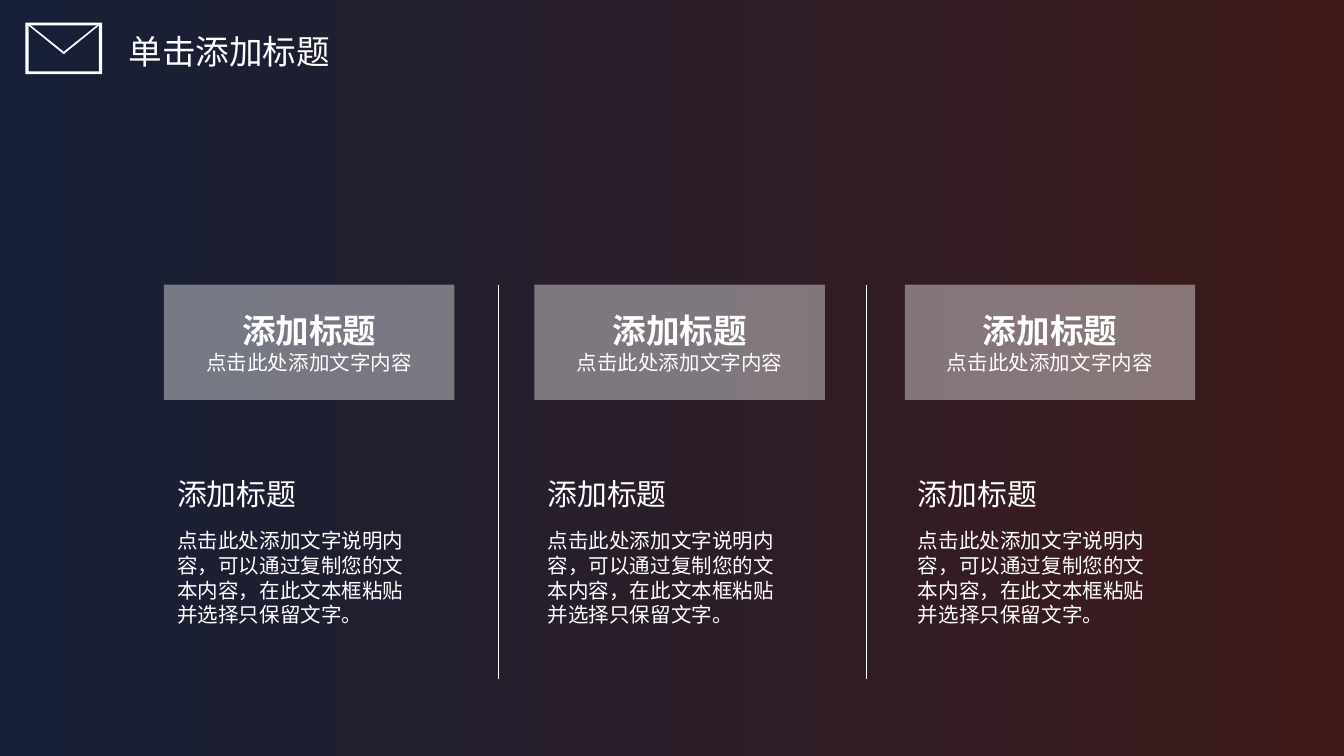
"""Build a dark gradient slide with an envelope title and three text columns."""
import lxml.etree
import pptx
import pptx.dml.color
import pptx.enum.shapes
import pptx.enum.text
import pptx.oxml.ns
import pptx.util

Cm = pptx.util.Cm
Pt = pptx.util.Pt
RGBColor = pptx.dml.color.RGBColor
qn = pptx.oxml.ns.qn

NAVY = RGBColor(0x16, 0x1F, 0x37)
MAROON = RGBColor(0x3E, 0x1B, 0x1A)
WHITE = RGBColor(0xFF, 0xFF, 0xFF)
FONT = "Noto Sans CJK SC"

TITLE = "单击添加标题"
HEADING = "添加标题"
CAPTION = "点击此处添加文字内容"
BODY = "点击此处添加文字说明内容，可以通过复制您的文本内容，在此文本框粘贴并选择只保留文字。"

COLUMN_LEFT, COLUMN_PITCH = 3.1, 7
CARD_TOP, CARD_WIDTH, CARD_HEIGHT = 5.38, 5.49, 2.18
DIVIDER_LEFT, DIVIDER_PITCH, DIVIDER_BOTTOM = 9.42, 6.96, 12.83

FRAME_OUTER = [(1.93, 1.4), (0.48, 1.4), (0.48, 0.43), (1.93, 0.43)]
FRAME_INNER = [(0.54, 1.35), (1.87, 1.35), (1.87, 0.48), (0.54, 0.48)]
FLAP = [(0.51, 0.46), (0.53, 0.44), (1.22, 0.99), (1.22, 1.02), (1.2, 1.02)]
ENVELOPE_SPAN = 2.41


def add_text(p, text, size=11, bold=False, color=WHITE, font=FONT, align=None):
    p.alignment = align
    r = p.add_run()
    r.text = text
    r.font.size = Pt(size)
    r.font.bold = bold
    r.font.name = font
    r.font.color.rgb = color
    ea = lxml.etree.SubElement(r.font._element, qn("a:ea"))
    ea.set("typeface", font)


class SlideBuilder:
    def __init__(self, slide, color=WHITE):
        self.s = slide
        self.color = color

    def background(self, start, end):
        fill = self.s.background.fill
        fill.gradient()
        fill.gradient_angle = 0
        for stop, color in zip(fill.gradient_stops, (start, end)):
            stop.color.rgb = color

    def paint(self, sp, opacity=100):
        sp.shadow.inherit = False
        sp.fill.solid()
        sp.fill.fore_color.rgb = self.color
        sp.line.fill.background()
        if opacity < 100:
            color = sp._element.spPr.find(qn("a:solidFill"))[0]
            alpha = lxml.etree.SubElement(color, qn("a:alpha"))
            alpha.set("val", str(opacity * 1000))

    def outline(self, *contours):
        points = [[(Cm(x), Cm(y)) for x, y in c] for c in contours]
        builder = self.s.shapes.build_freeform(*points[0][0])
        builder.add_line_segments(points[0][1:])
        for contour in points[1:]:
            builder.move_to(*contour[0])
            builder.add_line_segments(contour[1:])
        self.paint(builder.convert_to_shape())

    def text(self, left, top, width, height, text, size, wrap=True):
        sp = self.s.shapes.add_textbox(Cm(left), Cm(top), Cm(width), Cm(height))
        tf = sp.text_frame
        tf.word_wrap = wrap
        tf.auto_size = pptx.enum.text.MSO_AUTO_SIZE.SHAPE_TO_FIT_TEXT
        add_text(tf.paragraphs[0], text, size=size)

    def divider(self, x, top, bottom):
        line = self.s.shapes.add_connector(
            pptx.enum.shapes.MSO_CONNECTOR.STRAIGHT,
            Cm(x), Cm(top), Cm(x), Cm(bottom))
        line.line.color.rgb = self.color
        line.line.width = Pt(0.25)
        lxml.etree.SubElement(line._element.spPr, qn("a:effectLst"))

    def card(self, left, top, width, height, heading, caption):
        sp = self.s.shapes.add_shape(
            pptx.enum.shapes.MSO_SHAPE.RECTANGLE,
            Cm(left), Cm(top), Cm(width), Cm(height))
        self.paint(sp, opacity=40)
        tf = sp.text_frame
        tf.word_wrap = True
        tf.vertical_anchor = pptx.enum.text.MSO_ANCHOR.MIDDLE
        tf.margin_left = tf.margin_right = Cm(0.18)
        tf.margin_top = tf.margin_bottom = Cm(0.1)
        center = pptx.enum.text.PP_ALIGN.CENTER
        add_text(tf.paragraphs[0], heading, size=18, bold=True, align=center)
        add_text(tf.add_paragraph(), caption, align=center)


def main():
    prs = pptx.Presentation()
    prs.slide_width, prs.slide_height = Cm(25.4), Cm(14.29)
    s = SlideBuilder(prs.slides.add_slide(prs.slide_layouts[6]))
    s.background(NAVY, MAROON)

    s.outline(FRAME_OUTER, FRAME_INNER)
    s.outline([(ENVELOPE_SPAN - x, y) for x, y in FLAP])
    s.outline(FLAP)
    s.text(2.18, 0.46, 5.49, 1.02, TITLE, 18)

    for i in range(2):
        s.divider(DIVIDER_LEFT + i * DIVIDER_PITCH, CARD_TOP, DIVIDER_BOTTOM)

    for i in range(3):
        left = COLUMN_LEFT + i * COLUMN_PITCH
        s.card(left, CARD_TOP, CARD_WIDTH, CARD_HEIGHT, HEADING, CAPTION)
        s.text(left, 8.86, 2.79, 0.94, HEADING, 16, wrap=False)
        s.text(left, 9.86, 5.11, 2.13, BODY, 11)

    prs.save("out.pptx")


if __name__ == "__main__":
    main()
